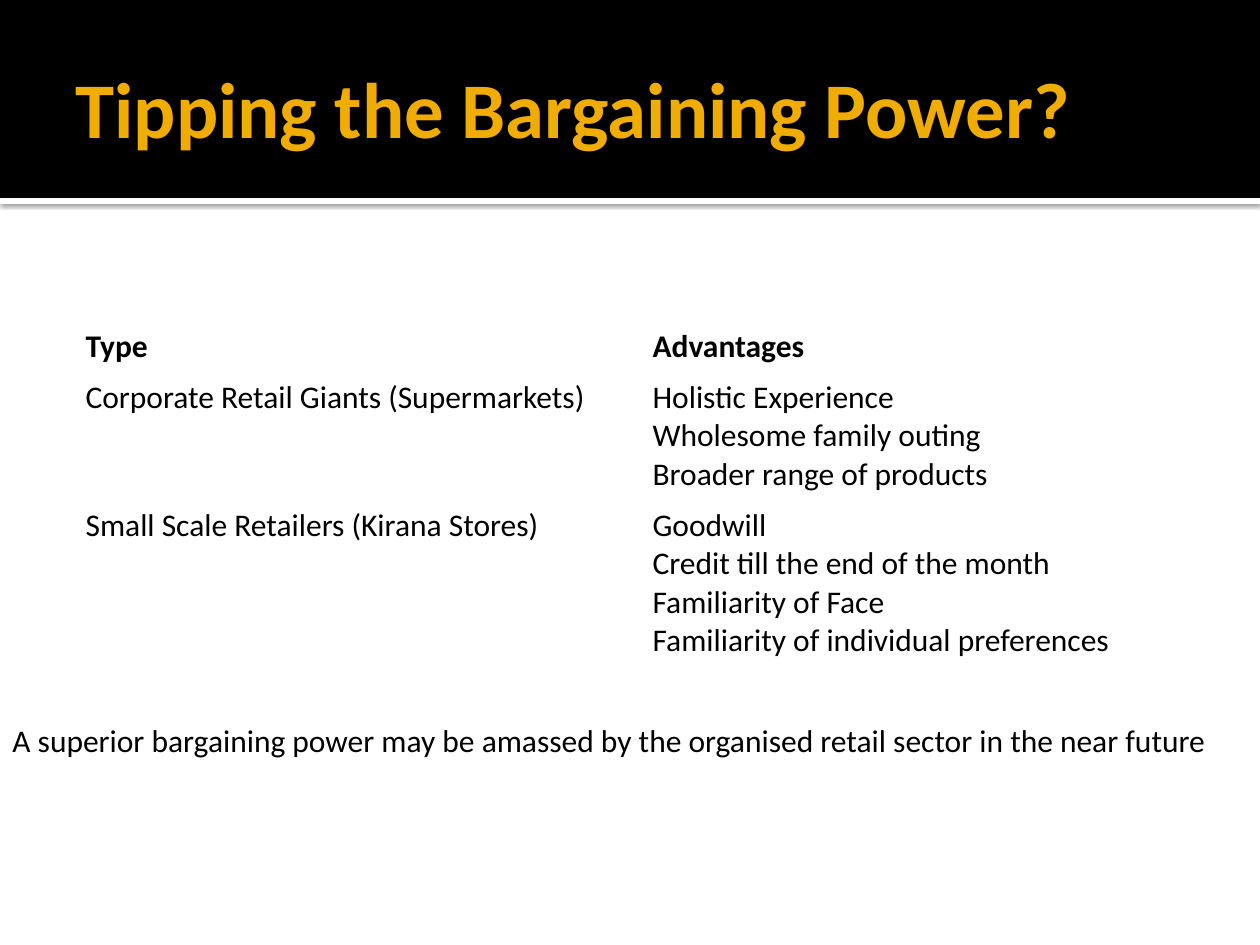
from lxml import etree
from pptx import Presentation
from pptx import util as u
from pptx.dml.color import RGBColor
from pptx.enum import shapes, text
from pptx.oxml import ns

PX = 914400 / 126
COLORS = {"band": "000000", "rule": "FFFFFF", "title": "F0AD00", "ink": "000000"}
ROWS = [
    (["Type"], ["Advantages"]),
    (["Corporate Retail Giants (Supermarkets)"],
     ["Holistic Experience", "Wholesome family outing", "Broader range of products"]),
    (["Small Scale Retailers (Kirana Stores)"],
     ["Goodwill", "Credit till the end of the month", "Familiarity of Face",
      "Familiarity of individual preferences"]),
]


def emu(px):
    return u.Emu(round(px * PX))


def hue(name):
    return RGBColor.from_string(COLORS[name])


class Deck:
    """Holds the style and the current slide."""
    font = "Calibri"
    size = 18

    def __init__(self, wide, high):
        self.prs = Presentation()
        self.prs.slide_width, self.prs.slide_height = emu(wide), emu(high)
        self.slide = self.prs.slides.add_slide(self.prs.slide_layouts[5])

    def fill(self, frame, lines, size=size, color="ink", bold=False):
        """Put each line in a paragraph of its own."""
        for i, line in enumerate(lines):
            para = frame.paragraphs[0] if i == 0 else frame.add_paragraph()
            para.alignment = text.PP_ALIGN.LEFT
            run = para.add_run()
            run.text = line
            run.font.name, run.font.size = self.font, u.Pt(size)
            run.font.bold = bold
            run.font.color.rgb = hue(color)

    def band(self, box, color, shade=False):
        rect = self.slide.shapes.add_shape(
            shapes.MSO_SHAPE.RECTANGLE, *map(emu, box))
        rect.shadow.inherit = False
        rect.fill.solid()
        rect.fill.fore_color.rgb = hue(color)
        rect.line.fill.background()
        if shade:
            self.shade(rect)

    def shade(self, shape):
        """Add a soft shadow straight below the shape."""
        effects = shape._element.spPr.find(ns.qn("a:effectLst"))
        outer = etree.SubElement(effects, ns.qn("a:outerShdw"), blurRad="31750",
                                 dist="10160", dir="5400000", rotWithShape="0")
        color = etree.SubElement(outer, ns.qn("a:srgbClr"), val="000000")
        etree.SubElement(color, ns.qn("a:alpha"), val="60000")

    def title(self, box, line):
        title = self.slide.shapes.title
        title.left, title.top, title.width, title.height = map(emu, box)
        self.slide.shapes._spTree.append(title._element)  # in front of the bands
        frame = title.text_frame
        frame.auto_size = text.MSO_AUTO_SIZE.NONE
        frame.vertical_anchor = text.MSO_ANCHOR.MIDDLE
        frame.margin_left = u.Inches(0.1)
        frame.margin_right = frame.margin_top = frame.margin_bottom = u.Inches(0.05)
        self.fill(frame, [line], 45, "title", True)

    def table(self, box, rows, highs):
        table = self.slide.shapes.add_table(
            len(rows), len(rows[0]), *map(emu, box)).table
        table.first_row = table.horz_banding = False
        for r, (row, high) in enumerate(zip(rows, highs)):
            table.rows[r].height = emu(high)
            for c, lines in enumerate(row):
                cell = table.cell(r, c)
                cell.fill.background()
                head = r == 0
                cell.vertical_anchor = (
                    text.MSO_ANCHOR.BOTTOM if head else text.MSO_ANCHOR.TOP)
                self.fill(cell.text_frame, lines, bold=head)

    def note(self, box, line):
        frame = self.slide.shapes.add_textbox(*map(emu, box)).text_frame
        frame.word_wrap = True
        self.fill(frame, [line])


def main():
    deck = Deck(1260, 945)
    deck.band((0, 198, 1260, 6), "rule", shade=True)
    deck.band((0, 0, 1260, 198), "band")
    deck.table((73, 283, 1134, 383), ROWS, (89, 128, 166))
    deck.title((63, 21, 1134, 173), "Tipping the Bargaining Power?")
    deck.note((0, 715, 1229, 89), "A superior bargaining power may be amassed "
              "by the organised retail sector in the near future")
    deck.prs.save("out.pptx")


if __name__ == "__main__":
    main()
